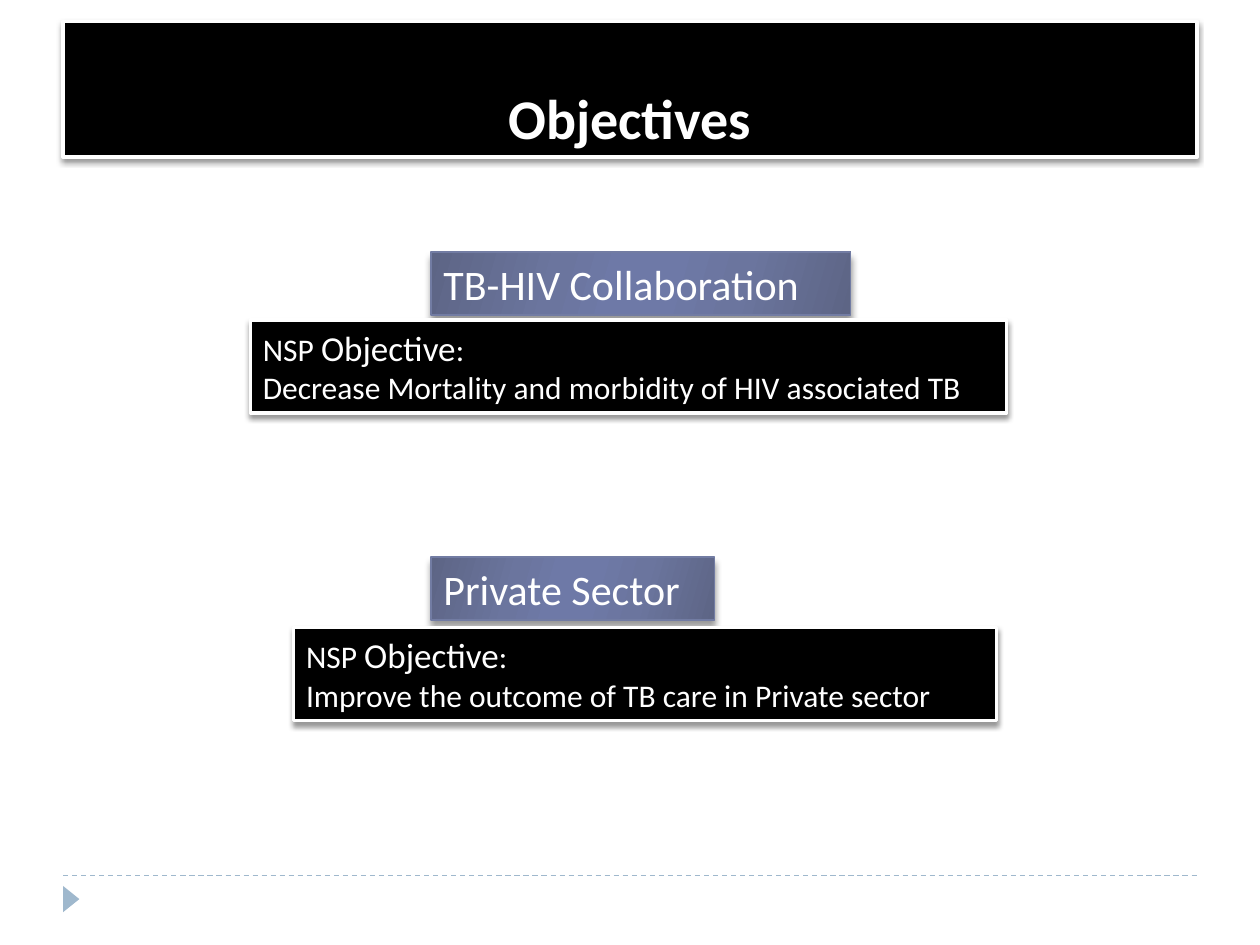
from lxml import etree
from pptx import Presentation
from pptx.dml.color import RGBColor
from pptx.enum.dml import MSO_LINE
from pptx.enum.shapes import MSO_CONNECTOR, MSO_SHAPE
from pptx.enum.text import MSO_ANCHOR, MSO_AUTO_SIZE, PP_ALIGN
from pptx.oxml.ns import qn
from pptx.util import Cm, Pt

RECT, TRIANGLE = MSO_SHAPE.RECTANGLE, MSO_SHAPE.ISOSCELES_TRIANGLE
STRAIGHT, DASH = MSO_CONNECTOR.STRAIGHT, MSO_LINE.DASH
TOP, BOTTOM = MSO_ANCHOR.TOP, MSO_ANCHOR.BOTTOM
LEFT, CENTER = PP_ALIGN.LEFT, PP_ALIGN.CENTER
GROW = MSO_AUTO_SIZE.SHAPE_TO_FIT_TEXT

FONT = "Calibri"
BLACK, WHITE, ACCENT, HEADING_LINE = "000000", "FFFFFF", "9FB8CD", "727CA3"
HEADING_STOPS = [(0, "5D6585"), (30, "6B759E"), (45, "6E79A7"),
                 (55, "6E79A7"), (73, "6B759E"), (100, "5D6585")]
MARGIN, CONTENT_WIDTH = 1.27, 22.86


def rgb(value):
    """Return the colour for a hex string."""
    return RGBColor.from_string(value)


def add_shadow(sp, blur, distance):
    """Give a shape a soft black shadow straight below it."""
    sp.shadow.inherit = False
    effects = sp._element.spPr.find(qn("a:effectLst"))
    outer = etree.SubElement(effects, qn("a:outerShdw"), blurRad=str(Pt(blur)),
                             dist=str(Pt(distance)), dir="5400000", rotWithShape="0")
    color = etree.SubElement(outer, qn("a:srgbClr"), val=BLACK)
    etree.SubElement(color, qn("a:alpha"), val="40000")


def fill_gradient(sp, stops, angle):
    """Fill a shape with a linear gradient, the angle running clockwise."""
    sp.fill.gradient()
    sp.fill.gradient_angle = 360 - angle
    gs_list = sp._element.spPr.find(".//" + qn("a:gsLst"))
    for gs in list(gs_list):
        gs_list.remove(gs)
    for position, color in stops:
        gs = etree.SubElement(gs_list, qn("a:gs"), pos=str(position * 1000))
        etree.SubElement(gs, qn("a:srgbClr"), val=color)


def add_panel(s, box, line, width, anchor=TOP):
    """Add a black rectangle with an outline and set up its text frame."""
    sp = s.shapes.add_shape(RECT, *map(Cm, box))
    sp.fill.solid()
    sp.fill.fore_color.rgb = rgb(BLACK)
    sp.line.color.rgb = rgb(line)
    sp.line.width = Pt(width)
    sp.text_frame.word_wrap = True
    sp.text_frame.vertical_anchor = anchor
    return sp


def style(p, size, align=LEFT, bold=False):
    """Set the alignment and font of a paragraph."""
    p.alignment = align
    p.font.name, p.font.size, p.font.bold = FONT, Pt(size), bold
    p.font.color.rgb = rgb(WHITE)


def add_title(s, box, text):
    """Add the title banner."""
    sp = add_panel(s, box, WHITE, 2, BOTTOM)
    add_shadow(sp, 3, 2)
    p = sp.text_frame.paragraphs[0]
    p.text = text
    style(p, 32, CENTER, True)


def add_heading(s, box, text):
    """Add the gradient heading of an objective."""
    sp = add_panel(s, box, HEADING_LINE, 0.75)
    fill_gradient(sp, HEADING_STOPS, 16)
    add_shadow(sp, 4, 3.4)
    sp.text_frame.auto_size = GROW
    p = sp.text_frame.paragraphs[0]
    p.text = text
    style(p, 24)


def add_objective(s, box, text):
    """Add the black box that states an objective."""
    sp = add_panel(s, box, WHITE, 2)
    add_shadow(sp, 3, 2)
    tf = sp.text_frame
    tf.auto_size = GROW
    p = tf.paragraphs[0]
    style(p, 18)
    for part, size in (("NSP ", 18), ("Objective", 20), (":", 18)):
        r = p.add_run()
        r.text = part
        r.font.size = Pt(size)
    p = tf.add_paragraph()
    p.text = text
    style(p, 18)


def add_rule(s, left, top, width):
    """Add a dashed horizontal rule."""
    line = s.shapes.add_connector(STRAIGHT, Cm(left), Cm(top), Cm(left + width), Cm(top))
    line.line.color.rgb = rgb(ACCENT)
    line.line.width = Pt(0.75)
    line.line.dash_style = DASH
    etree.SubElement(line._element.spPr, qn("a:effectLst"))


def add_marker(s, box):
    """Add the footer triangle that points right."""
    sp = s.shapes.add_shape(TRIANGLE, *map(Cm, box))
    sp.rotation = 90
    sp.shadow.inherit = False
    sp.fill.solid()
    sp.fill.fore_color.rgb = rgb(ACCENT)
    sp.line.fill.background()


def main():
    """Build the objectives slide."""
    prs = Presentation()
    prs.slide_width, prs.slide_height = Cm(25.4), Cm(19.05)
    s = prs.slides.add_slide(prs.slide_layouts[6])
    for top in (17.65, 3.18):
        add_rule(s, MARGIN, top, CONTENT_WIDTH)
    add_marker(s, (1.17, 17.96, 0.53, 0.33))
    add_title(s, (MARGIN, 0.43, CONTENT_WIDTH, 2.74), "Objectives")
    add_heading(s, (8.69, 5.08, 8.46, 1.27), "TB-HIV Collaboration")
    add_heading(s, (8.69, 11.23, 5.72, 1.27), "Private Sector")
    add_objective(s, (5.05, 6.45, 15.24, 1.88),
                  "Decrease Mortality and morbidity of HIV associated TB")
    add_objective(s, (5.92, 12.65, 14.17, 1.88),
                  "Improve the outcome of TB care in Private sector")
    prs.save("out.pptx")


if __name__ == "__main__":
    main()
